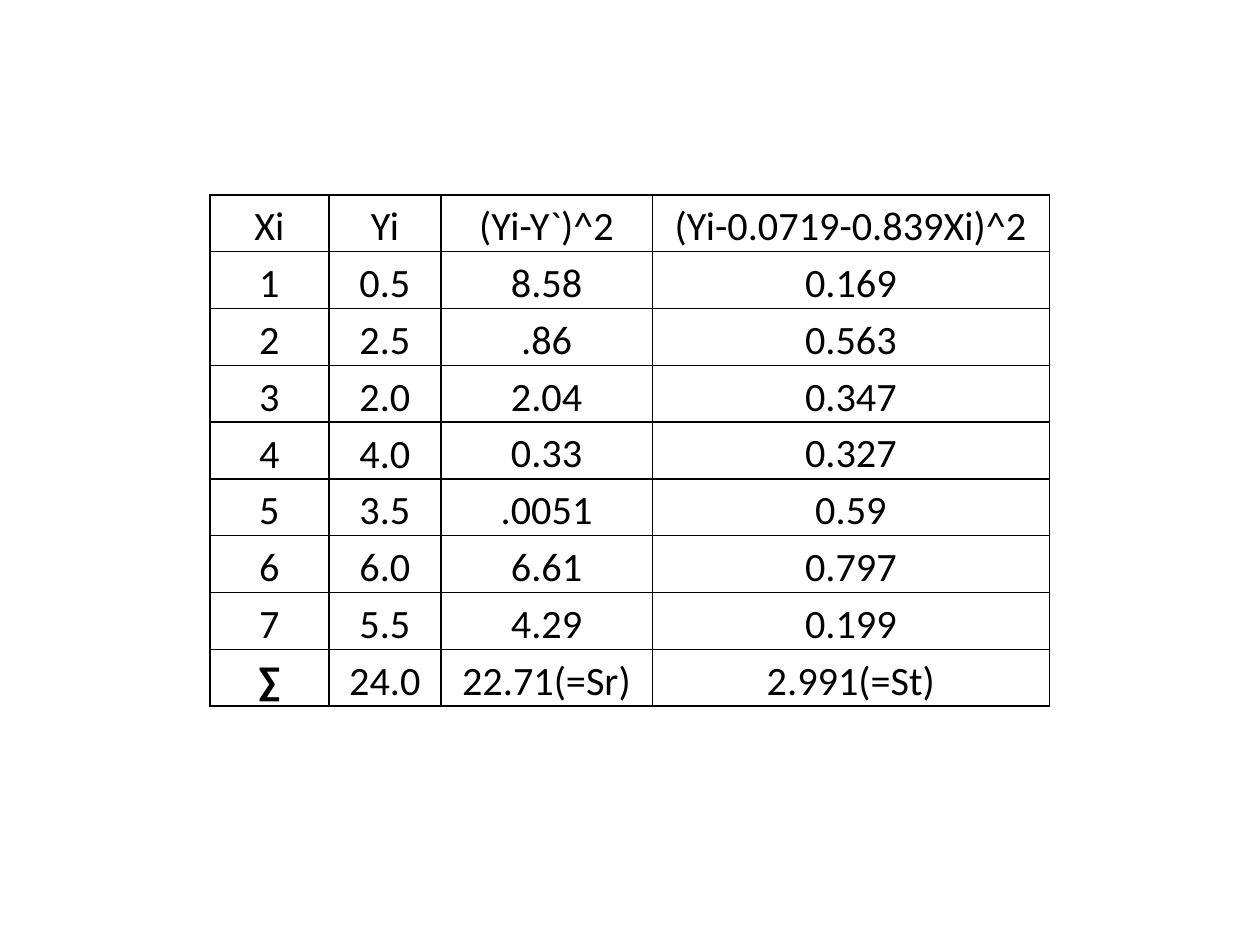
import pptx
import pptx.dml.color
import pptx.enum.text
import pptx.oxml
import pptx.oxml.ns
import pptx.util
from pptx.util import Cm

BLACK = "000000"
COLUMN_WIDTHS = [2.4, 2.26, 4.26, 8.01]  # cm
ROW_HEIGHT = 1.1  # cm
ROWS = [
    ["Xi", "Yi", "(Yi-Y`)^2", "(Yi-0.0719-0.839Xi)^2"],
    ["1", "0.5", "8.58", "0.169"],
    ["2", "2.5", ".86", "0.563"],
    ["3", "2.0", "2.04", "0.347"],
    ["4", "4.0", "0.33", "0.327"],
    ["5", "3.5", ".0051", "0.59"],
    ["6", "6.0", "6.61", "0.797"],
    ["7", "5.5", "4.29", "0.199"],
    ["∑", "24.0", "22.71(=Sr)", "2.991(=St)"],
]


def color(hex_string):
    return pptx.dml.color.RGBColor.from_string(hex_string)


def add_borders(cell, hex_string, width):
    """Draw a solid line on all four sides of a cell."""
    properties = cell._tc.get_or_add_tcPr()
    for side in ("lnL", "lnR", "lnT", "lnB"):
        properties.append(pptx.oxml.parse_xml(
            f'<a:{side} {pptx.oxml.ns.nsdecls("a")} w="{pptx.util.Pt(width)}">'
            f'<a:solidFill><a:srgbClr val="{hex_string}"/></a:solidFill>'
            f'</a:{side}>'))


def format_cell(cell, text, middle, bold):
    cell.margin_left = cell.margin_right = Cm(0.18)
    cell.margin_top = cell.margin_bottom = 0
    anchor = pptx.enum.text.MSO_ANCHOR
    cell.vertical_anchor = anchor.MIDDLE if middle else anchor.TOP
    cell.text = text
    paragraph = cell.text_frame.paragraphs[0]
    paragraph.alignment = pptx.enum.text.PP_ALIGN.CENTER
    paragraph.line_spacing = 1.15
    paragraph.font.name = "Calibri"
    paragraph.font.size = pptx.util.Pt(23)
    paragraph.font.bold = bold
    paragraph.font.color.rgb = color(BLACK)
    add_borders(cell, BLACK, 1)
    cell.fill.background()


def add_regression_table(slide, left, top):
    table = slide.shapes.add_table(
        len(ROWS), len(COLUMN_WIDTHS), Cm(left), Cm(top),
        Cm(sum(COLUMN_WIDTHS)), Cm(ROW_HEIGHT * len(ROWS))).table
    table.first_row = table.horz_banding = False
    for column, width in zip(table.columns, COLUMN_WIDTHS):
        column.width = Cm(width)
    for row_index, values in enumerate(ROWS):
        table.rows[row_index].height = Cm(ROW_HEIGHT)
        for column_index, text in enumerate(values):
            # The Xi and Yi values are centred vertically below the header
            middle = row_index > 0 and column_index < 2
            format_cell(table.cell(row_index, column_index), text,
                        middle, bold=text == "∑")


def main():
    presentation = pptx.Presentation()
    presentation.slide_width = Cm(25.4)
    presentation.slide_height = Cm(19.05)
    # Blank layout: the slide has no title
    slide = presentation.slides.add_slide(presentation.slide_layouts[6])
    add_regression_table(slide, left=4.23, top=3.93)
    presentation.save("out.pptx")


if __name__ == "__main__":
    main()
